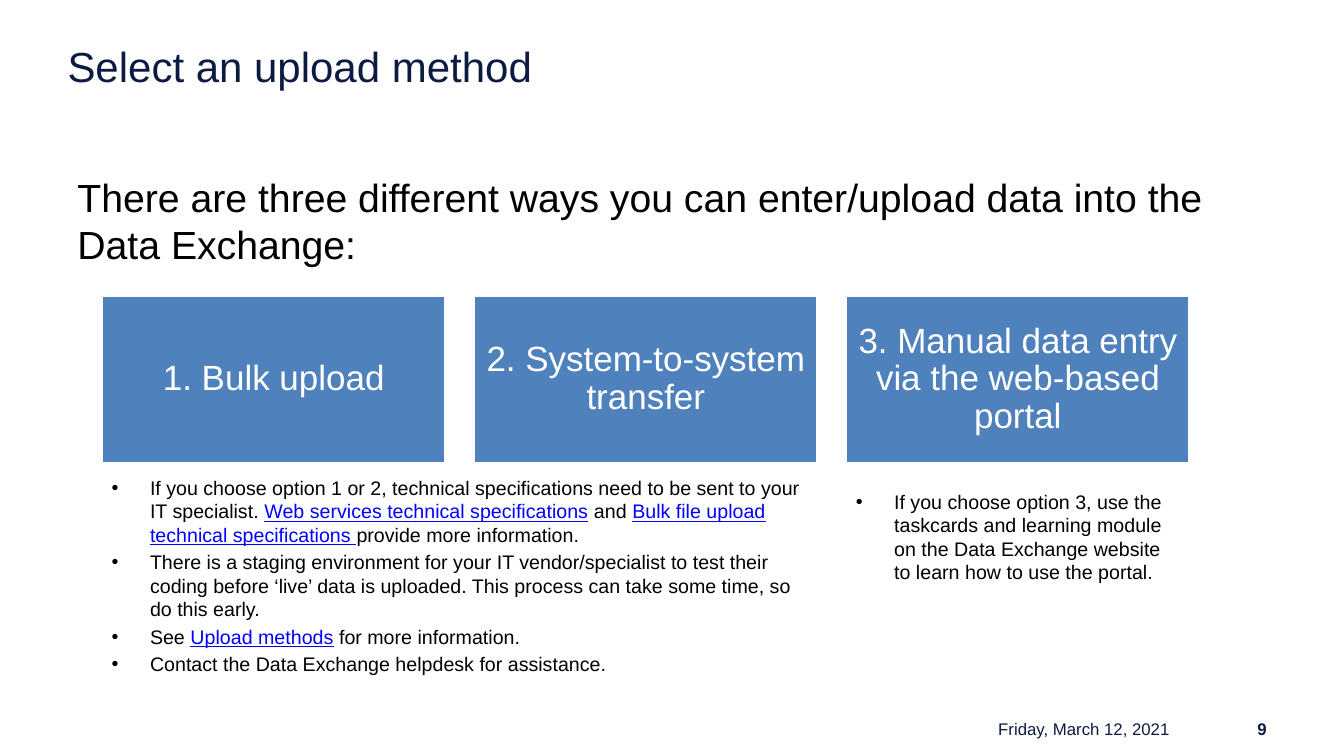
from lxml import etree
from pptx import Presentation
from pptx.dml.color import RGBColor
from pptx.enum.shapes import MSO_SHAPE
from pptx.enum.text import MSO_ANCHOR, PP_ALIGN
from pptx.oxml.ns import qn
from pptx.util import Inches, Pt

RECT = MSO_SHAPE.RECTANGLE
TOP, MIDDLE = MSO_ANCHOR.TOP, MSO_ANCHOR.MIDDLE
LEFT, CENTER, RIGHT = PP_ALIGN.LEFT, PP_ALIGN.CENTER, PP_ALIGN.RIGHT
NAVY, BLACK, WHITE = "0D1B43", "000000", "FFFFFF"
BLUE, LINK = "4F81BD", "0000FF"

# Method cards: left edge, top, width, height and distance between cards
CARD_X, CARD_Y, CARD_W, CARD_H, PITCH = 1.01, 2.93, 3.41, 1.67, 3.69
METHODS = [
    "1. Bulk upload",
    "2. System-to-system transfer",
    "3. Manual data entry via the web-based portal",
]

# Each note is a list of (text, is link) runs
UPLOAD_NOTES = [
    [("If you choose option 1 or 2, technical specifications need to be sent "
      "to your IT specialist. ", False),
     ("Web services technical specifications", True),
     (" and ", False),
     ("Bulk file upload technical specifications ", True),
     ("provide more information.", False)],
    [("There is a staging environment for your IT vendor/specialist to test "
      "their coding before ‘live’ data is uploaded. This process can take "
      "some time, so do this early.", False)],
    [("See ", False), ("Upload methods", True),
     (" for more information.", False)],
    [("Contact the Data Exchange helpdesk for assistance.", False)],
]
PORTAL_NOTES = [
    [("If you choose option 3, use the taskcards and learning module on the "
      "Data Exchange website to learn how to use the portal.", False)],
]


def color(code):
    return RGBColor.from_string(code)


def style(para, size, code, align=LEFT, bold=False):
    para.alignment = align
    font = para.font
    font.name, font.size, font.bold = "Arial", Pt(size), bold
    font.color.rgb = color(code)


def frame(slide, box, anchor=TOP):
    text = slide.shapes.add_textbox(*map(Inches, box)).text_frame
    text.word_wrap = True
    text.vertical_anchor = anchor
    return text


def inset(text, gap):
    text.margin_left = text.margin_right = Inches(gap)
    text.margin_top = text.margin_bottom = Inches(gap)


def add_label(slide, box, words, size, code, anchor=TOP, align=LEFT, bold=False):
    text = frame(slide, box, anchor)
    para = text.paragraphs[0]
    para.text = words
    style(para, size, code, align, bold)
    return text


def add_card(slide, box, words):
    card = slide.shapes.add_shape(RECT, *map(Inches, box))
    card.shadow.inherit = False
    card.fill.solid()
    card.fill.fore_color.rgb = color(BLUE)
    card.line.color.rgb = color(WHITE)
    card.line.width = Pt(2)
    text = card.text_frame
    text.word_wrap = True
    text.vertical_anchor = MIDDLE
    inset(text, 0.1)
    para = text.paragraphs[0]
    para.text = words
    para.line_spacing = 0.9
    style(para, 25, WHITE, CENTER)


def add_bullet(para):
    props = para._p.get_or_add_pPr()
    props.set("marL", str(Inches(0.38)))
    props.set("indent", str(-Inches(0.38)))
    etree.SubElement(props, qn("a:buFont")).set("typeface", "Arial")
    etree.SubElement(props, qn("a:buChar")).set("char", "•")


def add_notes(slide, box, notes):
    text = frame(slide, box)
    for i, note in enumerate(notes):
        para = text.add_paragraph() if i else text.paragraphs[0]
        add_bullet(para)
        style(para, 14, BLACK)
        if i:
            para.space_before = Pt(2.8)
        for words, linked in note:
            run = para.add_run()
            run.text = words
            if linked:
                run.font.underline = True
                run.font.color.rgb = color(LINK)


def add_header(slide, box):
    x, y, w, h = box
    title = add_label(slide, (x, y, w, 0.66), "Select an upload method", 30, NAVY)
    inset(title, 0)
    add_label(slide, (x, y + 1.27, 11.47, 1.04),
              "There are three different ways you can enter/upload data into "
              "the Data Exchange:", 28, BLACK)


def add_footer(slide, box):
    x, y, w, h = box
    add_label(slide, (x, y, 3.11, h), "Friday, March 12, 2021", 12, NAVY,
              MIDDLE, RIGHT)
    add_label(slide, (x + w - 1.09, y, 1.09, h), "9", 12, NAVY,
              MIDDLE, RIGHT, True)


def main():
    deck = Presentation()
    deck.slide_width, deck.slide_height = Inches(13.33), Inches(7.5)
    slide = deck.slides.add_slide(deck.slide_layouts[6])

    # Title and introduction
    add_header(slide, (0.67, 0.4, 12, 2.31))

    # Row of method cards
    for i, method in enumerate(METHODS):
        add_card(slide, (CARD_X + i * PITCH, CARD_Y, CARD_W, CARD_H), method)

    # Notes below the cards
    add_notes(slide, (CARD_X, 4.67, PITCH + CARD_W, 2.25), UPLOAD_NOTES)
    add_notes(slide, (CARD_X + 2 * PITCH, 4.81, CARD_W, 2.11), PORTAL_NOTES)

    # Date and slide number
    add_footer(slide, (8.59, 7.12, 4.07, 0.23))
    deck.save("out.pptx")


if __name__ == "__main__":
    main()
